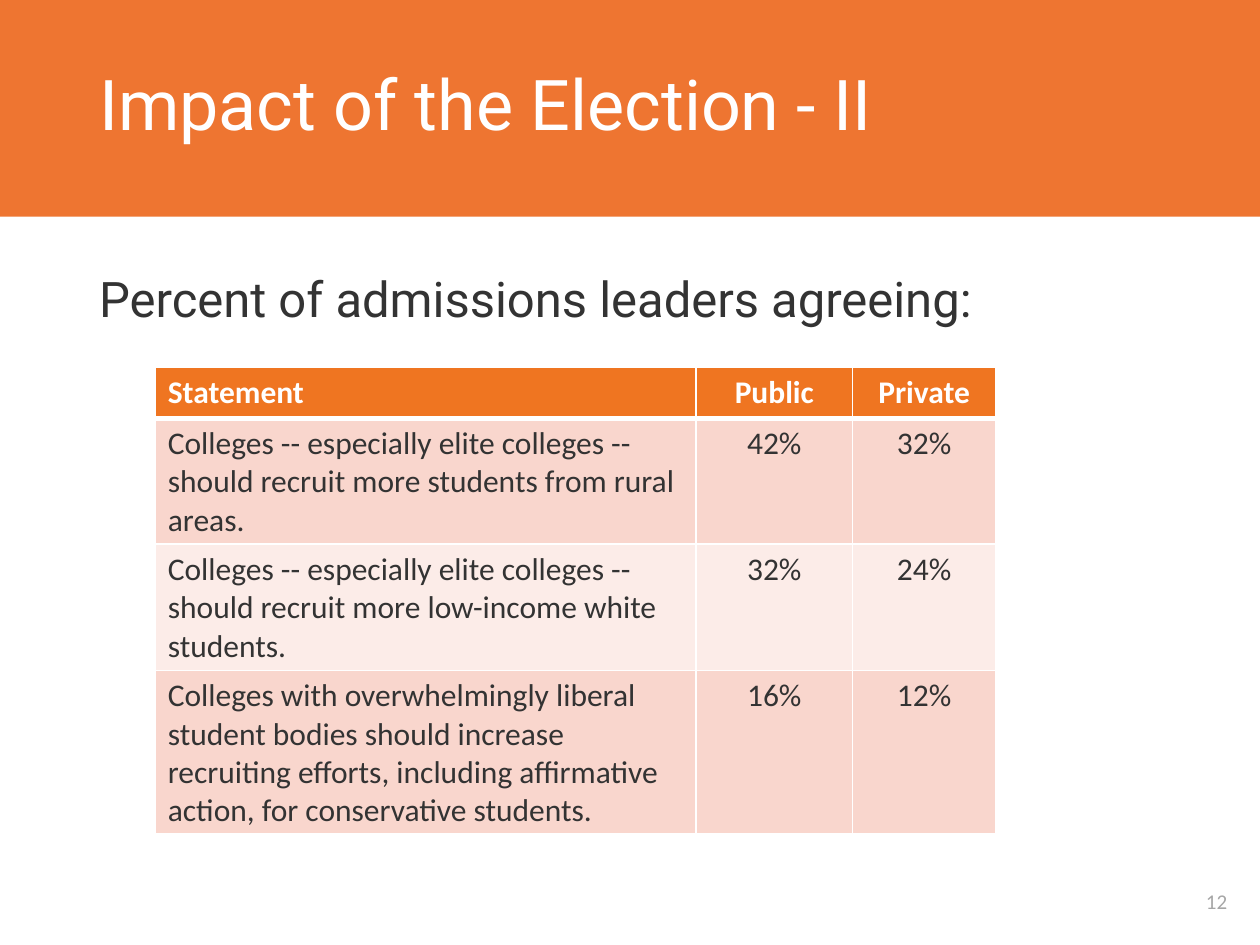
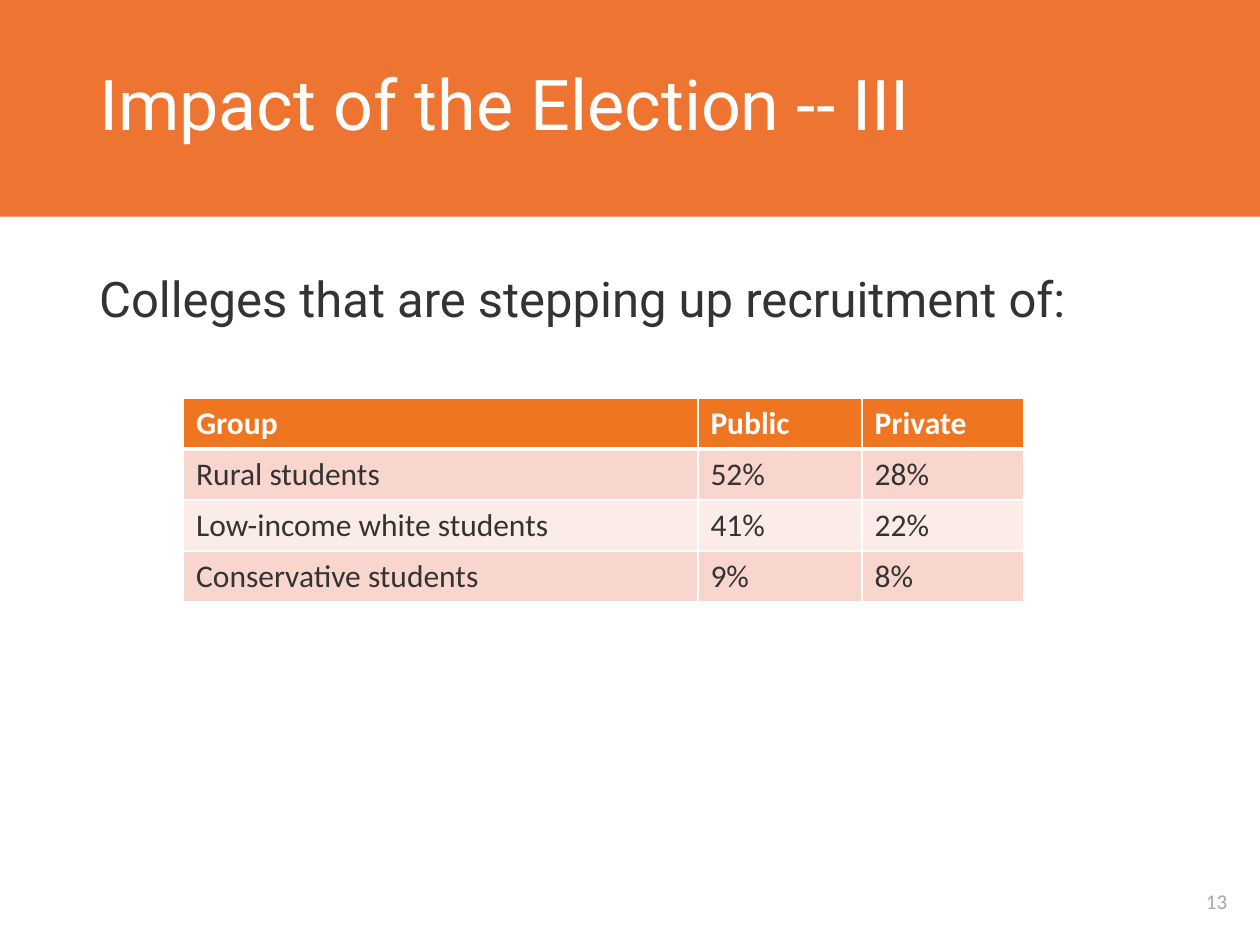
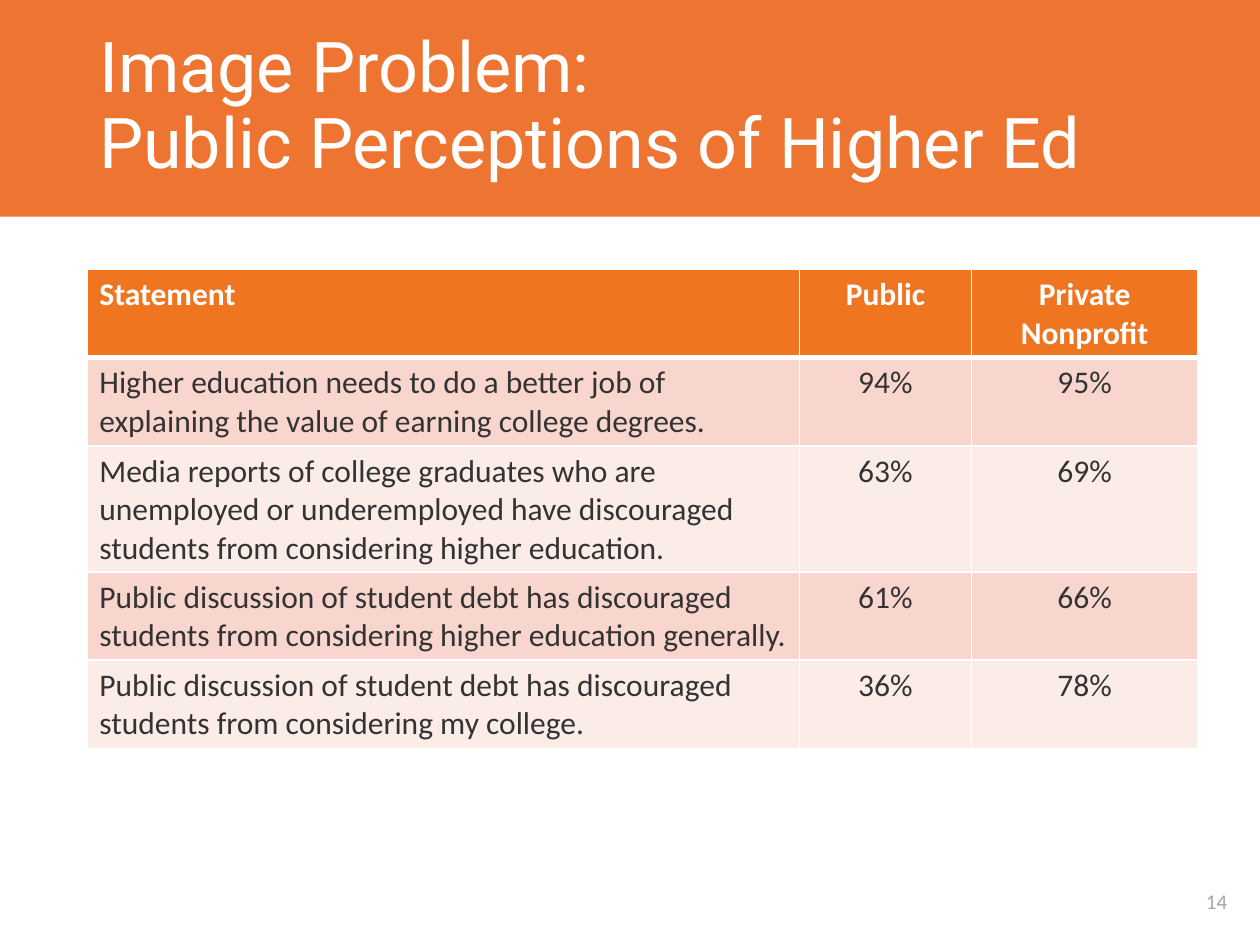
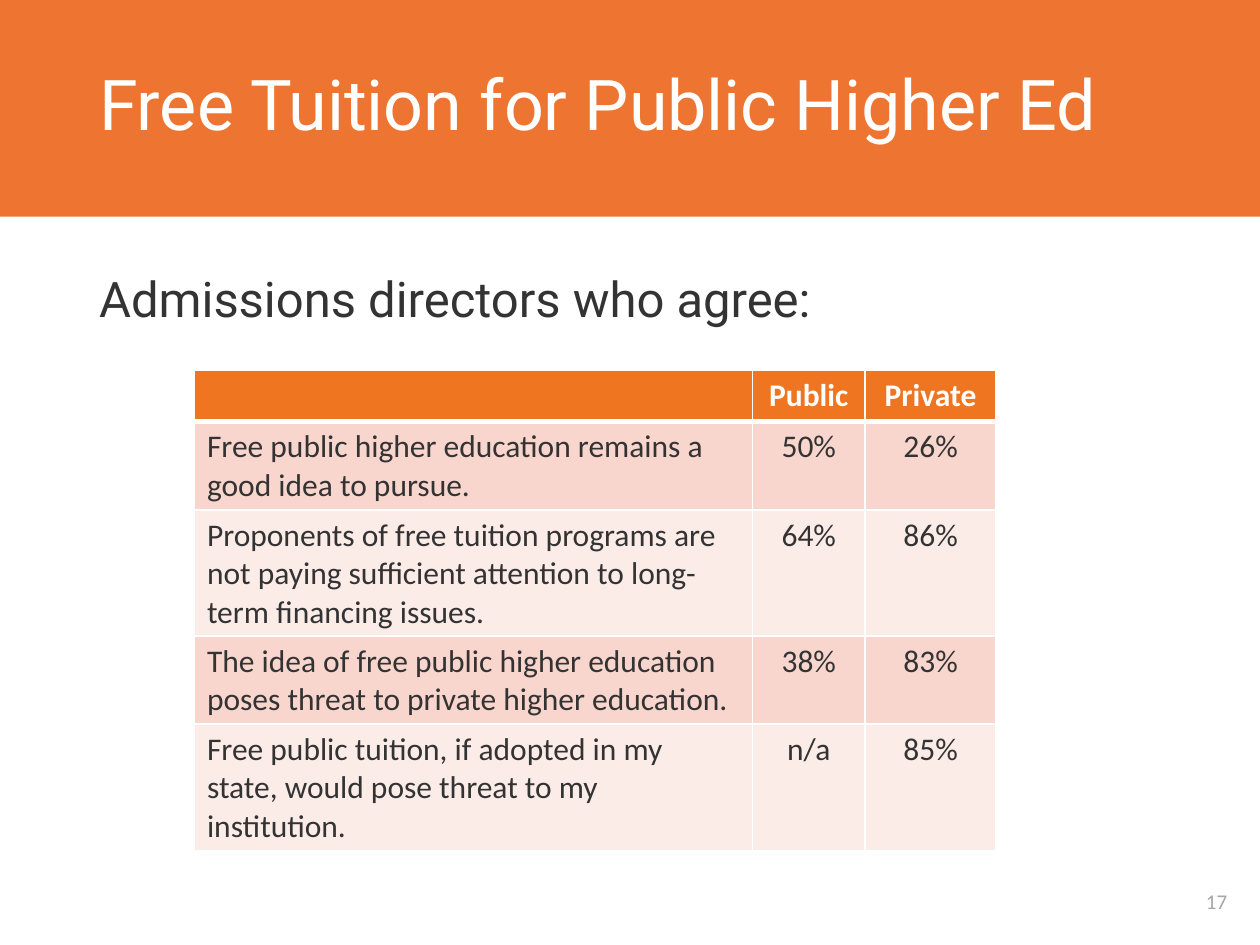
from lxml.etree import SubElement
from pptx import Presentation
from pptx.dml.color import RGBColor
from pptx.enum.shapes import MSO_SHAPE
from pptx.enum.text import MSO_ANCHOR, PP_ALIGN
from pptx.oxml.ns import qn
from pptx.util import Cm, Pt


def rgb(code):
    return RGBColor.from_string(code)


def edge(cell, side, width):
    """Draw one white cell border; call before filling the cell."""
    props = cell._tc.get_or_add_tcPr()
    line = SubElement(props, qn(f"a:ln{side}"), w=str(Pt(width)))
    fill = SubElement(line, qn("a:solidFill"))
    SubElement(fill, qn("a:srgbClr"), val=Deck.WHITE)


class Deck:
    WHITE = "FFFFFF"
    INK = "333333"
    GREY = "A6A6A6"
    BAND = "EE7531"
    HEAD = "EF7521"
    ROWS = ("F9D6CD", "FCECE8")
    SANS = "Roboto"
    PLAIN = "Calibri"
    LEFT, WIDE = 1.75, 21.9
    ROW = 1.03

    def __init__(self):
        self.show = Presentation()
        self.show.slide_width = Cm(25.4)
        self.show.slide_height = Cm(19.05)
        self.slide = None

    def page(self, title, number, lead=None):
        self.slide = self.show.slides.add_slide(self.show.slide_layouts[6])
        self.band()
        self.text(str(number), (23.65, 17.66, 1.75, 1), 12, self.PLAIN,
                  self.GREY, PP_ALIGN.CENTER, MSO_ANCHOR.MIDDLE)
        self.text(title, (self.LEFT, 0, self.WIDE, 4.35), 40, self.SANS,
                  self.WHITE, anchor=MSO_ANCHOR.MIDDLE, space=0.9)
        if lead:
            self.text(lead, (self.LEFT, 5.43, self.WIDE, 11.35), 28,
                      self.SANS, self.INK, space=0.9)

    def band(self):
        shape = self.slide.shapes.add_shape(
            MSO_SHAPE.RECTANGLE, Cm(-0.02), 0, Cm(25.44), Cm(4.37))
        shape.shadow.inherit = False
        shape.fill.solid()
        shape.fill.fore_color.rgb = rgb(self.BAND)
        shape.line.fill.background()

    def style(self, para, size, face, color, align=PP_ALIGN.LEFT, bold=False):
        para.alignment = align
        font = para.font
        font.size, font.name, font.bold = Pt(size), face, bold
        font.color.rgb = rgb(color)

    def text(self, words, place, size, face, color, align=PP_ALIGN.LEFT,
             anchor=MSO_ANCHOR.TOP, space=None):
        box = self.slide.shapes.add_textbox(*map(Cm, place))
        frame = box.text_frame
        frame.word_wrap = True
        frame.vertical_anchor = anchor
        para = frame.paragraphs[0]
        para.text = words
        para.line_spacing = space
        self.style(para, size, face, color, align)

    def table(self, left, top, widths, rows, align=PP_ALIGN.CENTER):
        """Add a table; align applies to every column but the first."""
        grid = self.slide.shapes.add_table(
            len(rows), len(widths), Cm(left), Cm(top),
            Cm(sum(widths)), Cm(self.ROW * len(rows))).table
        for col, width in zip(grid.columns, widths):
            col.width = Cm(width)
        for r, row in enumerate(rows):
            grid.rows[r].height = Cm(self.ROW)
            for c, words in enumerate(row):
                self.cell(grid.cell(r, c), r, words,
                          align if c else PP_ALIGN.LEFT)

    def cell(self, cell, r, words, align):
        head = r == 0
        for side in "LRTB":
            thick = (r, side) in ((0, "B"), (1, "T"))
            edge(cell, side, 3 if thick else 1)
        cell.fill.solid()
        cell.fill.fore_color.rgb = rgb(
            self.HEAD if head else self.ROWS[(r - 1) % 2])
        para = cell.text_frame.paragraphs[0]
        if words:
            para.text = words
        self.style(para, 18, self.PLAIN, self.WHITE if head else self.INK,
                   align, head)


def main():
    deck = Deck()

    deck.page("Impact of the Election - II", 12,
              "Percent of admissions leaders agreeing:")
    deck.table(3.13, 7.4, (10.9, 3.16, 2.88), (
        ("Statement", "Public", "Private"),
        ("Colleges -- especially elite colleges -- should recruit more "
         "students from rural areas.", "42%", "32%"),
        ("Colleges -- especially elite colleges -- should recruit more "
         "low-income white students.", "32%", "24%"),
        ("Colleges with overwhelmingly liberal student bodies should "
         "increase recruiting efforts, including affirmative action, for "
         "conservative students.", "16%", "12%"),
    ))

    deck.page("Impact of the Election -- III", 13,
              "Colleges that are stepping up recruitment of:")
    deck.table(3.7, 8.02, (10.37, 3.31, 3.25), (
        ("Group", "Public", "Private"),
        ("Rural students", "52%", "28%"),
        ("Low-income white students", "41%", "22%"),
        ("Conservative students", "9%", "8%"),
    ), PP_ALIGN.LEFT)

    deck.page("Image Problem:\nPublic Perceptions of Higher Ed", 14)
    deck.table(1.75, 5.43, (14.37, 3.46, 4.57), (
        ("Statement", "Public", "Private Nonprofit"),
        ("Higher education needs to do a better job of explaining the "
         "value of earning college degrees.", "94%", "95%"),
        ("Media reports of college graduates who are unemployed or "
         "underemployed have discouraged students from considering higher "
         "education.", "63%", "69%"),
        ("Public discussion of student debt has discouraged students from "
         "considering higher education generally.", "61%", "66%"),
        ("Public discussion of student debt has discouraged students from "
         "considering my college.", "36%", "78%"),
    ))

    deck.page("Free Tuition for Public Higher Ed", 17,
              "Admissions directors who agree:")
    deck.table(3.92, 7.47, (11.25, 2.27, 2.64), (
        ("", "Public", "Private"),
        ("Free public higher education remains a good idea to pursue.",
         "50%", "26%"),
        ("Proponents of free tuition programs are not paying sufficient "
         "attention to long-term financing issues.", "64%", "86%"),
        ("The idea of free public higher education poses threat to private "
         "higher education.", "38%", "83%"),
        ("Free public tuition, if adopted in my state, would pose threat to "
         "my institution.", "n/a", "85%"),
    ))

    deck.show.save("out.pptx")


if __name__ == "__main__":
    main()
